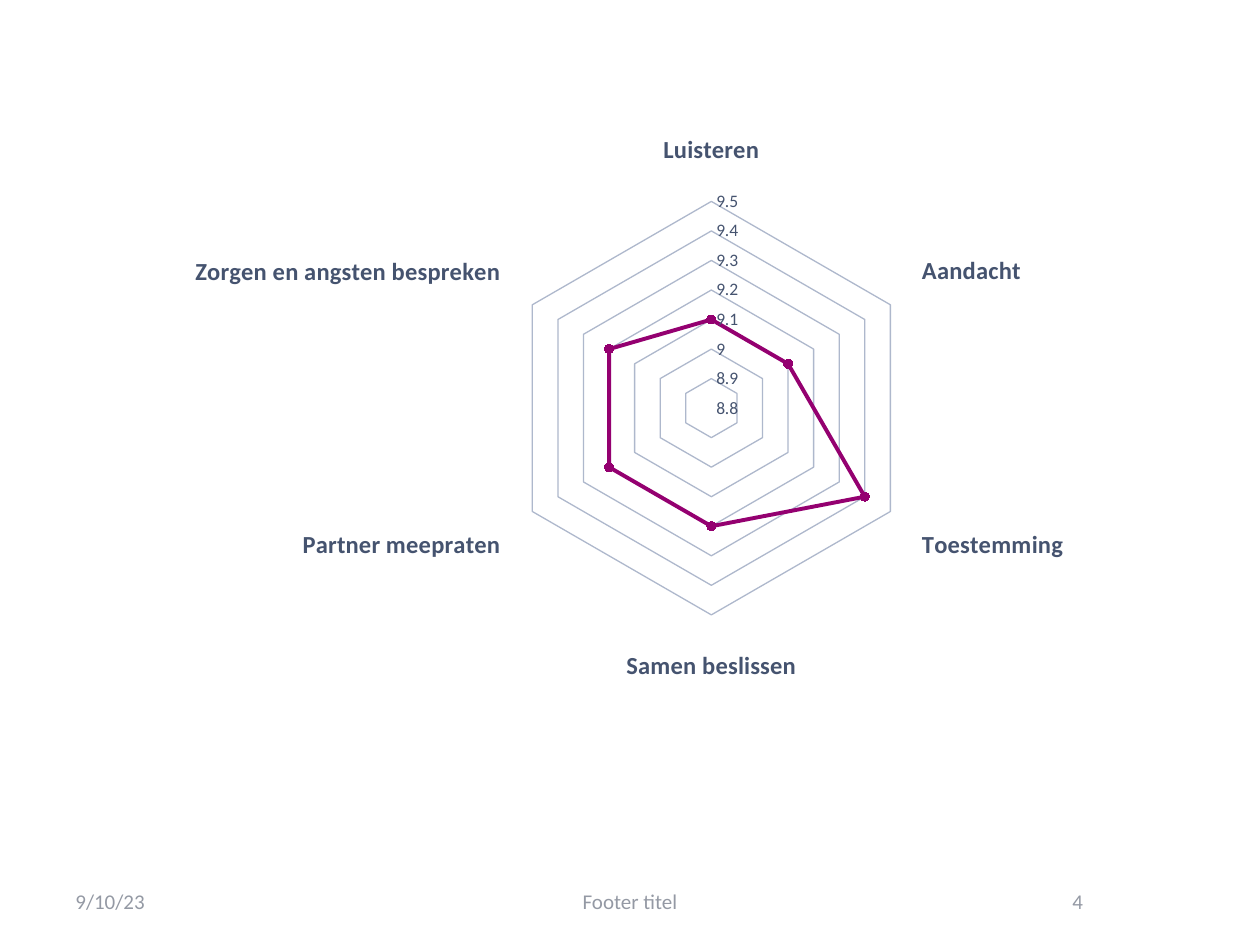
import pptx
import pptx.chart.data
import pptx.dml.color
import pptx.enum.chart
import pptx.enum.text
import pptx.util

Pt = pptx.util.Pt
ALIGN = pptx.enum.text.PP_ALIGN
TEXT_COLOR = pptx.dml.color.RGBColor(0x45, 0x53, 0x6F)
FOOTER_COLOR = pptx.dml.color.RGBColor(0x94, 0x99, 0xA4)
GRID_COLOR = pptx.dml.color.RGBColor(0xAE, 0xB8, 0xCC)
AXIS_COLOR = pptx.dml.color.RGBColor(0xE0, 0xE4, 0xEC)
SERIES_COLOR = pptx.dml.color.RGBColor(0x94, 0x00, 0x70)
FONT_NAME = "Calibri"


def add_text(slide, text, left, width, top=500.5, height=28.75, size=12,
             color=FOOTER_COLOR, alignment=ALIGN.LEFT):
    shape = slide.shapes.add_textbox(Pt(left), Pt(top), Pt(width), Pt(height))
    frame = shape.text_frame
    frame.word_wrap = True
    frame.vertical_anchor = pptx.enum.text.MSO_ANCHOR.MIDDLE
    paragraph = frame.paragraphs[0]
    paragraph.alignment = alignment
    run = paragraph.add_run()
    run.text = text
    run.font.name = FONT_NAME
    run.font.size = Pt(size)
    run.font.color.rgb = color


presentation = pptx.Presentation()
presentation.slide_width = Pt(720)
presentation.slide_height = Pt(540)
slide = presentation.slides.add_slide(presentation.slide_layouts[6])

scores = {
    "Luisteren": 9.1,
    "Aandacht": 9.1,
    "Toestemming": 9.4,
    "Samen beslissen": 9.2,
    "Partner meepraten": 9.2,
    "Zorgen en angsten bespreken": 9.2,
}
chart_data = pptx.chart.data.CategoryChartData()
chart_data.categories = list(scores)
chart_data.add_series("Series 1", list(scores.values()))
chart = slide.shapes.add_chart(
    pptx.enum.chart.XL_CHART_TYPE.RADAR_MARKERS,
    Pt(89.3), Pt(70.5), Pt(540.7), Pt(325.5), chart_data).chart
chart.has_title = False
chart.has_legend = False
chart.font.name = FONT_NAME
chart.font.size = Pt(10)
chart.font.color.rgb = TEXT_COLOR
chart.plots[0].vary_by_categories = False

category_axis = chart.category_axis
value_axis = chart.value_axis
for axis, size, bold in ((category_axis, 14, True), (value_axis, 10, False)):
    axis.major_tick_mark = pptx.enum.chart.XL_TICK_MARK.NONE
    axis.minor_tick_mark = pptx.enum.chart.XL_TICK_MARK.NONE
    font = axis.tick_labels.font
    font.name = FONT_NAME
    font.size = Pt(size)
    font.bold = bold
    font.color.rgb = TEXT_COLOR
category_axis.has_major_gridlines = False
category_axis.format.line.color.rgb = AXIS_COLOR
category_axis.format.line.width = Pt(0.75)

value_axis.minimum_scale = 8.8
value_axis.maximum_scale = 9.5
value_axis.major_unit = 0.1
value_axis.tick_labels.number_format = "General"
value_axis.tick_labels.number_format_is_linked = False
value_axis.format.line.fill.background()
value_axis.has_major_gridlines = True
grid_line = value_axis.major_gridlines.format.line
grid_line.color.rgb = GRID_COLOR
grid_line.width = Pt(0.75)

series = chart.plots[0].series[0]
series.smooth = False
series.format.line.color.rgb = SERIES_COLOR
series.format.line.width = Pt(2.25)
marker = series.marker
marker.style = pptx.enum.chart.XL_MARKER_STYLE.CIRCLE
marker.size = 5
marker.format.fill.solid()
marker.format.fill.fore_color.rgb = SERIES_COLOR
marker.format.line.color.rgb = SERIES_COLOR

add_text(slide, "9/10/23", 36, 168)
add_text(slide, "Footer titel", 246, 228, alignment=ALIGN.CENTER)
add_text(slide, "4", 516, 110, alignment=ALIGN.RIGHT)

presentation.save("out.pptx")
